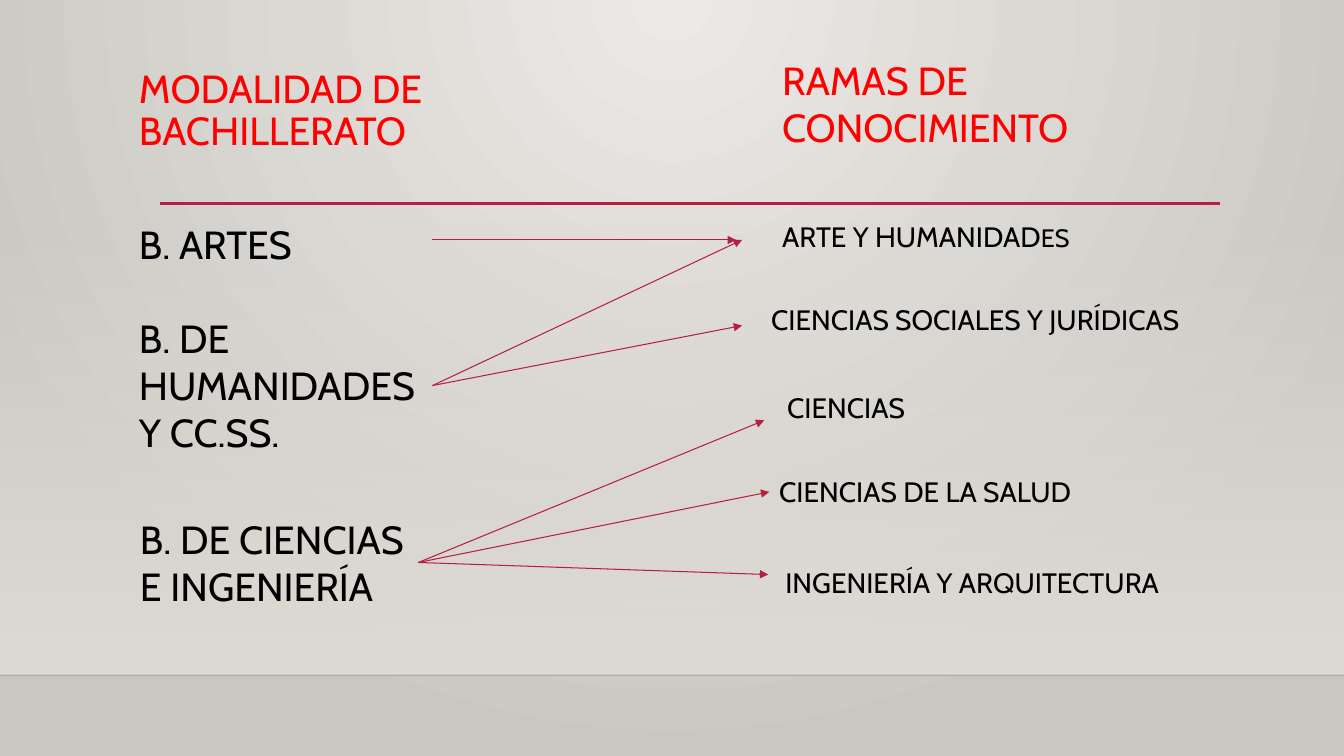
from lxml import etree
from pptx import Presentation
from pptx.dml.color import RGBColor
from pptx.enum import shapes, text
from pptx.oxml.ns import qn
from pptx.util import Inches, Pt

RED = RGBColor(0xFF, 0x00, 0x00)
BLACK = RGBColor(0x00, 0x00, 0x00)
CRIMSON = RGBColor(0xB7, 0x1E, 0x42)
EDGE = RGBColor(0x00, 0x00, 0x01)
BG_LIGHT = RGBColor(0xEC, 0xEA, 0xE7)
BG_DARK = RGBColor(0xCA, 0xC7, 0xC1)
PANEL = RGBColor(0xDF, 0xDB, 0xD5)
FONT = "Cabin"
WIDTH, HEIGHT, FLOOR = 13.33, 7.5, 6.7

# Content: (text, left, top, width, height)
TITLE = ("MODALIDAD DE BACHILLERATO", 1.28, 0.64, 5.26, 0.85)
BRANCH_TITLE = ("RAMAS DE CONOCIMIENTO", 7.66, 0.51, 4.54, 1.04)
TRACKS = {
    "artes": ("B. ARTES", 1.28, 2.14, 2.67, 0.57),
    "humanidades": ("B. DE HUMANIDADES Y CC.SS.", 1.28, 3.07, 3.01, 1.51),
    "ciencias": ("B. DE CIENCIAS E INGENIERÍA", 1.29, 5.06, 2.86, 1.04),
}
ARTS_BRANCH = ("ARTE Y HUMANIDAD", 7.66, 2.13, 3.32, 0.44)
HEALTH_BRANCH = ("CIENCIAS DE LA SALUD", 7.63, 4.66, 4.36, 0.44)
BRANCHES = [
    ("CIENCIAS SOCIALES Y JURÍDICAS", 7.55, 2.95, 4.54, 0.44),
    ("CIENCIAS", 7.71, 3.83, 2.66, 0.44),
    ("INGENIERÍA Y ARQUITECTURA", 7.69, 5.56, 4.26, 0.44),
]
# Arrows leaving the right side of a track: track, end points
FANS = [
    ("humanidades", [(7.36, 2.38), (7.36, 3.23)]),
    ("ciencias", [(7.58, 4.17), (7.63, 4.88), (7.62, 5.7)]),
]
HEALTH_END = (7.63, 4.88)

prs = Presentation()
prs.slide_width, prs.slide_height = Inches(WIDTH), Inches(HEIGHT)
s = prs.slides.add_slide(prs.slide_layouts[6])


def set_stops(fill, first, last):
    fill.gradient()
    for stop, color, position in zip(fill.gradient_stops, (first, last), (0, 1)):
        stop.color.rgb = color
        stop.position = position


def set_alpha(parent, percent):
    color = next(parent.iter(qn("a:srgbClr")))
    etree.SubElement(color, qn("a:alpha")).set("val", str(percent * 1000))


def add_label(item, size, color, grow=True):
    words, *box = item
    sp = s.shapes.add_textbox(*map(Inches, box))
    tf = sp.text_frame
    tf.word_wrap = True
    tf.auto_size = (text.MSO_AUTO_SIZE.SHAPE_TO_FIT_TEXT if grow
                    else text.MSO_AUTO_SIZE.NONE)
    p = tf.paragraphs[0]
    p.add_run().text = words
    p.font.size, p.font.name = Pt(size), FONT
    p.font.color.rgb = color
    return sp


def add_line(start, end, color, width, arrow=False):
    line = s.shapes.add_connector(shapes.MSO_CONNECTOR.STRAIGHT,
                                  *map(Inches, start + end))
    line.line.color.rgb = color
    line.line.width = Pt(width)
    if arrow:
        ln = line.line._get_or_add_ln()
        etree.SubElement(ln, qn("a:tailEnd")).set("type", "triangle")
    etree.SubElement(line._element.spPr, qn("a:effectLst"))
    return line


# Background: radial glow from the top centre
fill = s.background.fill
set_stops(fill, BG_LIGHT, BG_DARK)
grad = next(s._element.iter(qn("a:gradFill")))
grad.remove(grad.find(qn("a:lin")))
glow = etree.SubElement(grad, qn("a:path"))
glow.set("path", "circle")
focus = etree.SubElement(glow, qn("a:fillToRect"))
for side, value in zip("ltrb", (43, 0, 43, 100)):
    focus.set(side, str(value * 1000))

# Panel fading in towards the floor line
panel = s.shapes.add_shape(shapes.MSO_SHAPE.RECTANGLE, 0, Inches(2.21),
                           Inches(WIDTH), Inches(FLOOR - 2.21))
panel.shadow.inherit = False
panel.line.fill.background()
set_stops(panel.fill, PANEL, PANEL)
panel.fill.gradient_angle = 270
set_alpha(panel._element.spPr, 0)
floor = add_line((0, FLOOR), (WIDTH, FLOOR), EDGE, 1)
set_alpha(floor._element.spPr, 20)
add_line((1.59, 2.02), (12.1, 2.02), CRIMSON, 2.5)

# Headings
heading = add_label(TITLE, 28, RED, grow=False)
heading.text_frame.paragraphs[0].line_spacing = 0.9
add_label(BRANCH_TITLE, 28, RED)

# Tracks and branches
tracks = {key: add_label(item, 28, BLACK) for key, item in TRACKS.items()}
arts = add_label(ARTS_BRANCH, 20, BLACK)
r = arts.text_frame.paragraphs[0].add_run()
r.text = "ES"
r.font.size = Pt(18)
for branch in BRANCHES:
    add_label(branch, 20, BLACK)
health = add_label(HEALTH_BRANCH, 20, BLACK)

# Arrows from tracks to branches
for key, ends in FANS:
    _, left, top, width, height = TRACKS[key]
    for end in ends:
        arrow = add_line((left + width, top + height / 2), end, CRIMSON, 0.75, True)
        arrow.begin_connect(tracks[key], 3)
        if end == HEALTH_END:
            arrow.end_connect(health, 1)
add_line((4.28, 2.38), (7.3, 2.38), CRIMSON, 0.75, True)

prs.save("out.pptx")
